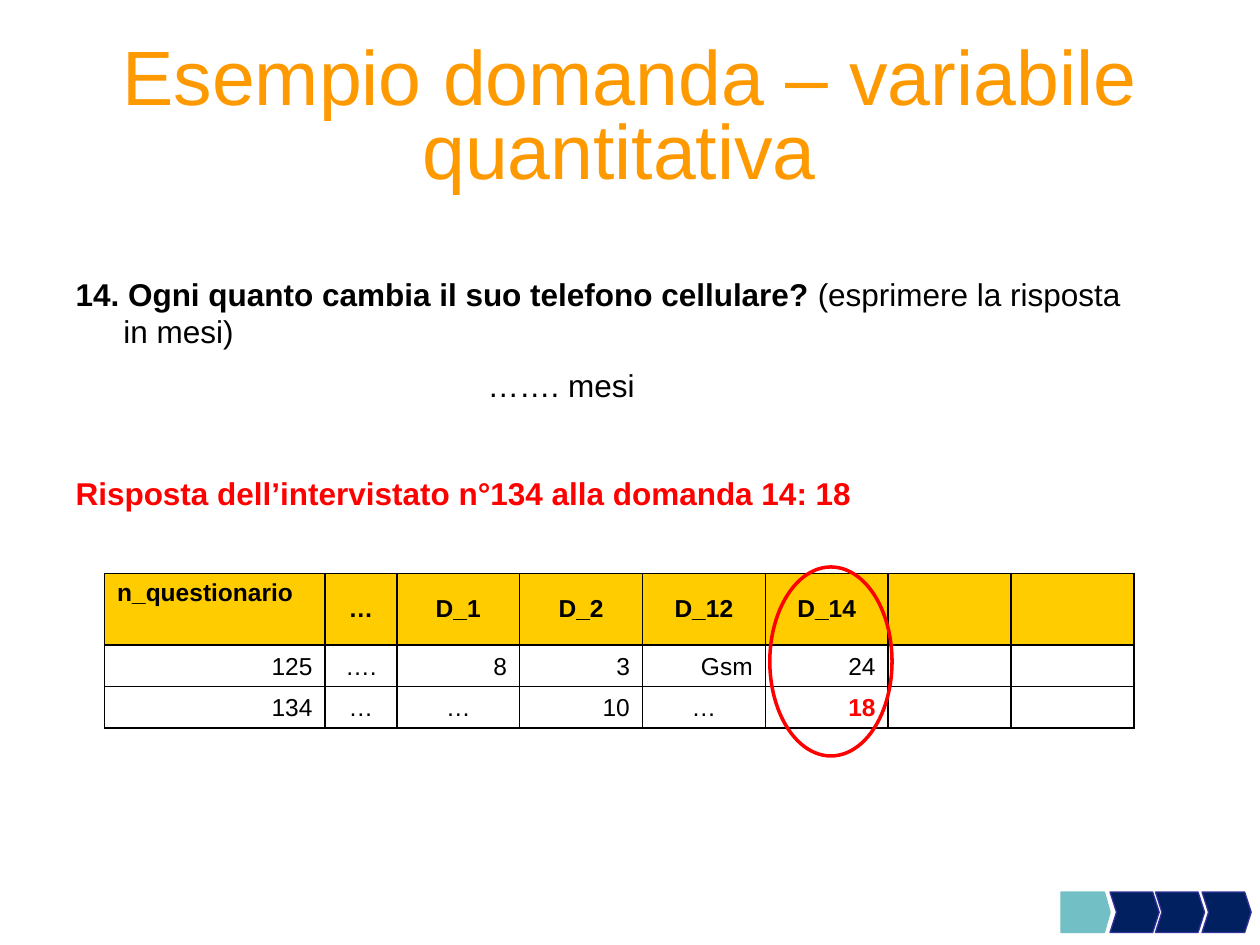
from lxml import etree
from pptx import Presentation
from pptx.dml.color import RGBColor
from pptx.enum.shapes import MSO_SHAPE
from pptx.enum.text import MSO_ANCHOR, MSO_AUTO_SIZE, PP_ALIGN
from pptx.oxml.ns import qn
from pptx.util import Inches, Pt

LEFT, CENTER, RIGHT = PP_ALIGN.LEFT, PP_ALIGN.CENTER, PP_ALIGN.RIGHT
TOP, MIDDLE, BOTTOM = MSO_ANCHOR.TOP, MSO_ANCHOR.MIDDLE, MSO_ANCHOR.BOTTOM
NO_FIT = MSO_AUTO_SIZE.NONE
OVAL, CHEVRON, PENTAGON = MSO_SHAPE.OVAL, MSO_SHAPE.CHEVRON, MSO_SHAPE.PENTAGON

BLACK, RED, ORANGE, YELLOW = "000000", "FF0000", "FF9900", "FFCC00"
NAVY, VIOLET, TEAL = "002060", "333399", "72BFC5"


def rgb(value):
    return RGBColor.from_string(value)


def apply(obj, values):
    for name, value in values.items():
        setattr(obj, name, value)


class SlideBuilder:
    font = "Arial"

    def __init__(self, slide):
        self.slide = slide

    def place(self, sp, box):
        apply(sp, dict(zip(("left", "top", "width", "height"), map(Inches, box))))

    def run(self, p, text, size, color=BLACK, bold=False):
        r = p.add_run()
        r.text = text
        apply(r.font, {"name": self.font, "size": Pt(size), "bold": bold})
        r.font.color.rgb = rgb(color)

    def title(self, text, box):
        sp = self.slide.shapes.title
        self.place(sp, box)
        tf = sp.text_frame
        apply(tf, {"word_wrap": True, "auto_size": NO_FIT, "vertical_anchor": MIDDLE})
        p = tf.paragraphs[0]
        apply(p, {"alignment": CENTER, "line_spacing": 0.8})
        self.run(p, text, 44, ORANGE)

    def body(self, items, box):
        sp = self.slide.placeholders[1]
        self.place(sp, box)
        tf = sp.text_frame
        apply(tf, {"word_wrap": True, "auto_size": NO_FIT, "vertical_anchor": TOP})
        for i, (runs, margin, indent, before) in enumerate(items):
            p = tf.add_paragraph() if i else tf.paragraphs[0]
            pPr = p._p.get_or_add_pPr()
            pPr.set("marL", str(Inches(margin)))
            pPr.set("indent", str(Inches(indent)))
            etree.SubElement(pPr, qn("a:buNone"))
            apply(p, {"alignment": LEFT, "space_before": Pt(before)})
            for text, color, bold in runs:
                self.run(p, text, 18, color, bold)

    def borders(self, cell):
        tcPr = cell._tc.get_or_add_tcPr()
        for i, side in enumerate(("lnL", "lnR", "lnT", "lnB")):
            ln = etree.Element(qn(f"a:{side}"), w=str(Pt(1)))
            fill = etree.SubElement(ln, qn("a:solidFill"))
            etree.SubElement(fill, qn("a:srgbClr"), val=BLACK)
            tcPr.insert(i, ln)

    def cell(self, cell, text, align, anchor, header, color):
        if header:
            cell.fill.solid()
            cell.fill.fore_color.rgb = rgb(YELLOW)
        else:
            cell.fill.background()
        self.borders(cell)
        cell.vertical_anchor = anchor
        if not text:
            apply(cell, {"margin_top": 0, "margin_bottom": 0})
            return
        p = cell.text_frame.paragraphs[0]
        p.alignment = align
        self.run(p, text, 14, color, header or color == RED)

    def table(self, rows, left, top, widths, heights):
        box = (left, top, sum(widths), sum(heights))
        shape = self.slide.shapes.add_table(len(rows), len(widths), *map(Inches, box))
        table = shape.table
        apply(table, {"first_row": False, "horz_banding": False})
        for col, width in zip(table.columns, widths):
            col.width = Inches(width)
        for row, height in zip(table.rows, heights):
            row.height = Inches(height)
        for i, row in enumerate(rows):
            header = i == 0
            for j, text in enumerate(row):
                align = CENTER if header or "…" in text else RIGHT
                anchor = MIDDLE if header else BOTTOM
                if header and j == 0:
                    align, anchor = LEFT, TOP
                color = RED if text == "18" else BLACK
                self.cell(table.cell(i, j), text, align, anchor, header, color)

    def shape(self, kind, box, line, width, fill=None, adj=None):
        sp = self.slide.shapes.add_shape(kind, *map(Inches, box))
        sp.shadow.inherit = False
        if adj is not None:
            sp.adjustments[0] = adj
        if fill:
            sp.fill.solid()
            sp.fill.fore_color.rgb = rgb(fill)
        else:
            sp.fill.background()
        sp.line.color.rgb = rgb(line)
        sp.line.width = Pt(width)


def main():
    prs = Presentation()
    prs.slide_width, prs.slide_height = Inches(10), Inches(7.5)
    s = SlideBuilder(prs.slides.add_slide(prs.slide_layouts[1]))

    s.title("Esempio domanda – variabile quantitativa ", (0.5, 0.33, 9, 1.25))
    s.body([
        ([("14. Ogni quanto cambia il suo telefono cellulare? ", BLACK, True),
          ("(esprimere la risposta in mesi)", BLACK, False)], 0.38, -0.38, 0),
        ([("……. mesi", BLACK, False)], 3.27, 0, 9),
        ([("Risposta dell’intervistato n°134 alla domanda 14: 18", RED, True)],
         0.38, -0.38, 40),
    ], (0.5, 2.13, 8.75, 3.43))

    s.table([
        ("n_questionario", "…", "D_1", "D_2", "D_12", "D_14", "", ""),
        ("125", "….", "8", "3", "Gsm", "24", "", ""),
        ("134", "…", "…", "10", "…", "18", "", ""),
    ], 0.83, 4.55, [1.75, 0.57] + [5.85 / 6] * 6, [0.57, 0.33, 0.33])
    s.shape(OVAL, (6.11, 4.5, 0.97, 1.5), RED, 2)

    s.shape(PENTAGON, (8.42, 7.08, 0.39, 0.32), TEAL, 0.75, TEAL, 0.14)
    for left in (8.81, 9.17, 9.54):
        s.shape(CHEVRON, (left, 7.08, 0.39, 0.32), VIOLET, 0.75, NAVY, 0.16)

    prs.save("out.pptx")


if __name__ == "__main__":
    main()
